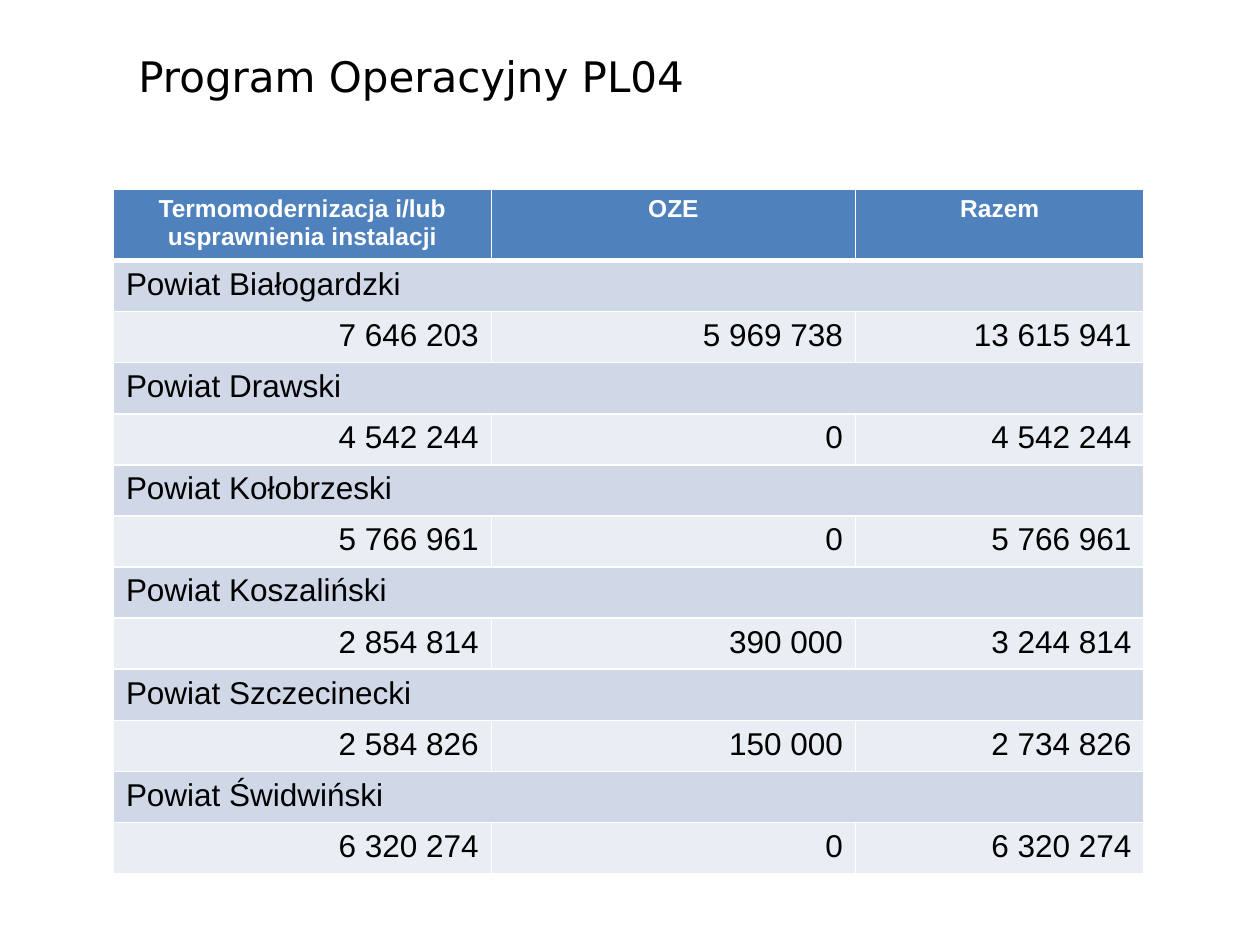
from lxml.etree import SubElement
from pptx import Presentation
from pptx.dml.color import RGBColor
from pptx.enum.text import MSO_AUTO_SIZE, PP_ALIGN
from pptx.oxml.ns import qn
from pptx.util import Inches, Pt

HEADINGS = ["Termomodernizacja i/lub usprawnienia instalacji", "OZE", "Razem"]
COUNTIES = [
    ("Białogardzki", ["7 646 203", "5 969 738", "13 615 941"]),
    ("Drawski", ["4 542 244", "0", "4 542 244"]),
    ("Kołobrzeski", ["5 766 961", "0", "5 766 961"]),
    ("Koszaliński", ["2 854 814", "390 000", "3 244 814"]),
    ("Szczecinecki", ["2 584 826", "150 000", "2 734 826"]),
    ("Świdwiński", ["6 320 274", "0", "6 320 274"]),
]
COLUMN_WIDTHS = [3, 2.89, 2.29]
TABLE_HEIGHT = 5.43
HEADER_HEIGHT = 0.56
WHITE, BLACK = "FFFFFF", "000000"
HEADER_BLUE, COUNTY_BLUE, AMOUNT_BLUE = "4F81BD", "D0D8E8", "E9EDF4"


def colour(hex_value):
    return RGBColor.from_string(hex_value)


def format_text(paragraph, size, font_name, hex_value, bold=False):
    for run in paragraph.runs:
        run.font.size = Pt(size)
        run.font.name = font_name
        run.font.bold = bold
        run.font.color.rgb = colour(hex_value)


def add_title(slide, text):
    title = slide.shapes.add_textbox(Inches(1), Inches(0.35), Inches(5.68), Inches(0.5))
    frame = title.text_frame
    frame.text = text
    frame.word_wrap = True
    frame.auto_size = MSO_AUTO_SIZE.SHAPE_TO_FIT_TEXT
    heading = frame.paragraphs[0]
    properties = heading._p.get_or_add_pPr()
    properties.set("marL", str(Inches(0.38)))
    properties.set("indent", str(-Inches(0.38)))
    format_text(heading, 24, "DejaVu Sans", BLACK)


def set_borders(cell, bottom_width):
    properties = cell._tc.get_or_add_tcPr()
    for side, width in zip("LRTB", [1, 1, 1, bottom_width]):
        line = SubElement(properties, qn(f"a:ln{side}"), w=str(Pt(width)))
        fill = SubElement(line, qn("a:solidFill"))
        SubElement(fill, qn("a:srgbClr"), val=WHITE)


def style_cell(cell, fill, bottom_width=1):
    set_borders(cell, bottom_width)
    cell.fill.solid()
    cell.fill.fore_color.rgb = colour(fill)


def write_cell(cell, text, align, size=18, hex_value=BLACK, bold=False):
    cell.text_frame.text = text
    paragraph = cell.text_frame.paragraphs[0]
    paragraph.alignment = align
    format_text(paragraph, size, "Arial", hex_value, bold)


def fill_header(cells):
    for cell, heading in zip(cells, HEADINGS):
        style_cell(cell, HEADER_BLUE, bottom_width=3)
        write_cell(cell, heading, PP_ALIGN.CENTER, 14, WHITE, True)


def fill_county(cells, county):
    for cell in cells:
        style_cell(cell, COUNTY_BLUE)
    cells[0].merge(cells[-1])
    write_cell(cells[0], f"Powiat {county}", PP_ALIGN.LEFT)


def fill_amounts(cells, amounts):
    for cell, amount in zip(cells, amounts):
        style_cell(cell, AMOUNT_BLUE)
        write_cell(cell, amount, PP_ALIGN.RIGHT)


def add_funding_table(slide):
    row_count = 1 + 2 * len(COUNTIES)
    funding = slide.shapes.add_table(
        row_count, len(HEADINGS), Inches(0.9), Inches(1.5),
        Inches(sum(COLUMN_WIDTHS)), Inches(TABLE_HEIGHT),
    ).table
    for column, width in zip(funding.columns, COLUMN_WIDTHS):
        column.width = Inches(width)
    for row in funding.rows:
        row.height = Inches((TABLE_HEIGHT - HEADER_HEIGHT) / (row_count - 1))
    funding.rows[0].height = Inches(HEADER_HEIGHT)

    rows = [list(row.cells) for row in funding.rows]
    fill_header(rows[0])
    for county_row, amount_row, (county, amounts) in zip(rows[1::2], rows[2::2], COUNTIES):
        fill_county(county_row, county)
        fill_amounts(amount_row, amounts)


def main():
    presentation = Presentation()
    presentation.slide_width = Inches(10)
    presentation.slide_height = Inches(7.5)
    slide = presentation.slides.add_slide(presentation.slide_layouts[6])
    add_title(slide, "Program Operacyjny PL04")
    add_funding_table(slide)
    presentation.save("out.pptx")


if __name__ == "__main__":
    main()
